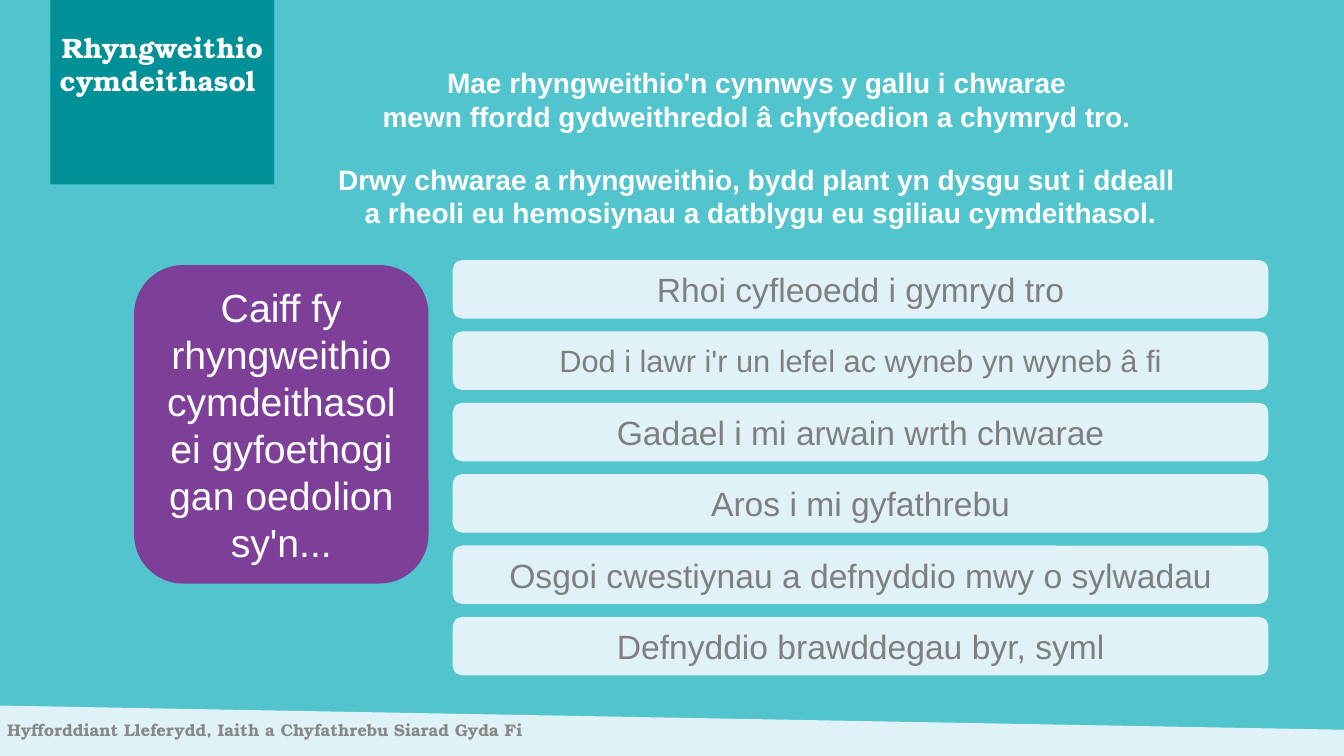
import pptx
import pptx.util
import pptx.dml.color
import pptx.enum.shapes
import pptx.enum.text

Inches, Pt = pptx.util.Inches, pptx.util.Pt
KIND = pptx.enum.shapes.MSO_SHAPE
ALIGN = pptx.enum.text.PP_ALIGN
ANCHOR = pptx.enum.text.MSO_ANCHOR

WIDE, HIGH = 13.33, 7.5
HUES = {
    "back": "51C4CE", "foot": "DFF2F7", "tab": "009098", "topic": "7E3F99",
    "bar": "E0F2F8", "white": "FFFFFF", "gray": "7F7F7F", "note": "888888",
}
SANS, SERIF = "Arial", "TeX Gyre Bonum"

# Column of answer bars: left edge, first top, size and step
BAR_LEFT, BAR_TOP, BAR_WIDE, BAR_HIGH, BAR_STEP = 4.49, 2.58, 8.09, 0.58, 0.708

INTRO = [
    "Mae rhyngweithio'n cynnwys y gallu i chwarae ",
    "mewn ffordd gydweithredol â chyfoedion a chymryd tro. ",
    "Drwy chwarae a rhyngweithio, bydd plant yn dysgu sut i ddeall ",
    "a rheoli eu hemosiynau a datblygu eu sgiliau cymdeithasol.",
]
TIPS = [
    ("Rhoi cyfleoedd i gymryd tro", 24),
    ("Dod i lawr i'r un lefel ac wyneb yn wyneb â fi", 22),
    ("Gadael i mi arwain wrth chwarae", 24),
    ("Aros i mi gyfathrebu", 24),
    ("Osgoi cwestiynau a defnyddio mwy o sylwadau", 24),
    ("Defnyddio brawddegau byr, syml", 24),
]


def color(name):
    return pptx.dml.color.RGBColor.from_string(HUES[name])


def paint(shape, hue):
    shape.shadow.inherit = False
    shape.fill.solid()
    shape.fill.fore_color.rgb = color(hue)
    shape.line.fill.background()


def write(shape, lines, size, hue, font=SANS, bold=False,
          align=ALIGN.CENTER, anchor=ANCHOR.TOP, pad=(0, 0)):
    frame = shape.text_frame
    side, edge = map(Inches, pad)
    look = {"word_wrap": True, "vertical_anchor": anchor,
            "margin_left": side, "margin_right": side,
            "margin_top": edge, "margin_bottom": edge}
    for key, value in look.items():
        setattr(frame, key, value)
    frame.text = "\n".join(lines)
    for para in frame.paragraphs:
        para.alignment = align
        para.font.color.rgb = color(hue)
        for key, value in {"name": font, "size": Pt(size), "bold": bold}.items():
            setattr(para.font, key, value)
    return frame


def label(slide, box, lines, size, hue, **style):
    shape = slide.shapes.add_textbox(*map(Inches, box))
    return write(shape, lines, size, hue, **style)


def block(slide, kind, box, hue):
    shape = slide.shapes.add_shape(kind, *map(Inches, box))
    paint(shape, hue)
    return shape


def card(slide, box, hue, text, size, ink):
    shape = block(slide, KIND.ROUNDED_RECTANGLE, box, hue)
    write(shape, [text], size, ink, anchor=ANCHOR.MIDDLE, pad=(0.1, 0.05))


def footer(slide):
    pen = slide.shapes.build_freeform(0, Inches(7), scale=1.0)
    edge = [(0, HIGH), (WIDE, HIGH), (WIDE, 7.24)]
    pen.add_line_segments([(Inches(x), Inches(y)) for x, y in edge], close=True)
    paint(pen.convert_to_shape(), "foot")
    label(slide, (0.07, 7.14, 8.56, 0.2),
          ["Hyfforddiant Lleferydd, Iaith a Chyfathrebu Siarad Gyda Fi"],
          12, "note", font=SERIF, bold=True, align=ALIGN.LEFT)


def main():
    deck = pptx.Presentation()
    deck.slide_width, deck.slide_height = Inches(WIDE), Inches(HIGH)
    slide = deck.slides.add_slide(deck.slide_layouts[6])
    slide.background.fill.solid()
    slide.background.fill.fore_color.rgb = color("back")

    footer(slide)

    # Introduction in two parts
    intro = label(slide, (2.08, 0.65, 10.93, 1.63), INTRO, 20, "white", bold=True)
    intro.paragraphs[2].space_before = Pt(21)

    # Title tab
    block(slide, KIND.RECTANGLE, (0.5, 0, 2.22, 1.83), "tab")
    label(slide, (0.5, 0.3, 2.22, 1.53), ["Rhyngweithio cymdeithasol "],
          20, "white", font=SERIF, bold=True)

    # Topic and its answers
    card(slide, (1.33, 2.63, 2.92, 3.16), "topic",
         "Caiff fy rhyngweithio cymdeithasol ei gyfoethogi gan oedolion sy'n...",
         28, "white")
    for row, (tip, size) in enumerate(TIPS):
        box = (BAR_LEFT, BAR_TOP + row * BAR_STEP, BAR_WIDE, BAR_HIGH)
        card(slide, box, "bar", tip, size, "gray")

    deck.save("out.pptx")


if __name__ == "__main__":
    main()
